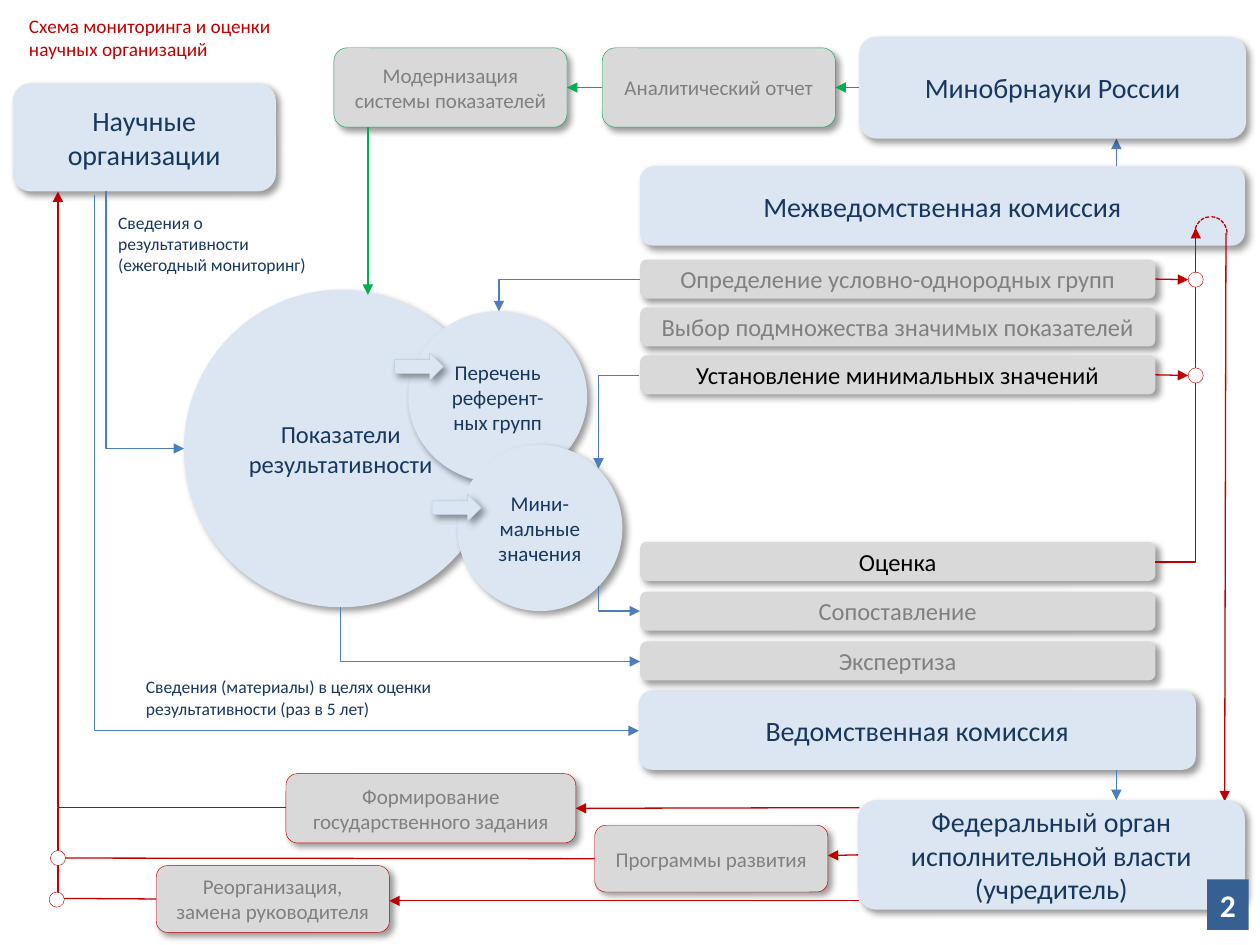
from pptx import Presentation
from pptx import util as u
from pptx.dml.color import RGBColor
from pptx.enum import dml, shapes, text
from pptx.oxml import parse_xml
from pptx.oxml.ns import nsdecls, qn

NAVY = RGBColor(0x17, 0x37, 0x5E)
PALE = RGBColor(0xDC, 0xE6, 0xF2)
PALE_EDGE = RGBColor(0xB9, 0xCD, 0xE5)
BLUE = RGBColor(0x4B, 0x7E, 0xBC)
BADGE = RGBColor(0x37, 0x60, 0x92)
LIGHT = RGBColor(0xD9, 0xD9, 0xD9)
GRAY = RGBColor(0x80, 0x80, 0x80)
BLACK = RGBColor(0, 0, 0)
WHITE = RGBColor(0xFF, 0xFF, 0xFF)
RED = RGBColor(0xC0, 0, 0)
GREEN = RGBColor(0, 0xB0, 0x50)
SHAPE = shapes.MSO_SHAPE
TOP, LEFT, BOTTOM, RIGHT = range(4)
SHADOW = (
    '<a:outerShdw %s blurRad="50800" dist="38100" dir="2700000" algn="tl" '
    'rotWithShape="0"><a:srgbClr val="000000"><a:alpha val="40000"/></a:srgbClr>'
    "</a:outerShdw>" % nsdecls("a")
)


def write(sp, words, size, color, align=text.PP_ALIGN.CENTER, bold=False):
    """Put words into a shape and format every run."""
    tf = sp.text_frame
    tf.text = words
    for p in tf.paragraphs:
        p.alignment = align
        for r in p.runs:
            r.font.name, r.font.size, r.font.bold = "Calibri", u.Pt(size), bold
            r.font.color.rgb = color


class Region:
    """A box on the slide whose parts are placed from its top left corner."""

    def __init__(self, s, box):
        self.shapes = s.shapes
        self.left, self.top = box[:2]

    def point(self, x, y):
        """Return slide lengths for a point of the region."""
        return u.Inches(self.left + x), u.Inches(self.top + y)

    def shape(self, kind, x, y, w, h, fill, edge=None, shadow=True, parent=None):
        """Add a preset shape."""
        sp = (parent or self.shapes).add_shape(
            kind, *self.point(x, y), u.Inches(w), u.Inches(h))
        sp.shadow.inherit = False
        if shadow:
            sp._element.spPr.find(qn("a:effectLst")).append(parse_xml(SHADOW))
        if fill is None:
            sp.fill.background()
        else:
            sp.fill.solid()
            sp.fill.fore_color.rgb = fill
        if edge is None:
            sp.line.fill.background()
        else:
            sp.line.color.rgb = edge
            sp.line.width = u.Pt(0.25)
        return sp

    def body(self, x, y, w, h, words, kind=SHAPE.ROUNDED_RECTANGLE, size=16):
        """Add a pale blue body with its name."""
        sp = self.shape(kind, x, y, w, h, PALE)
        write(sp, words, size, NAVY)
        return sp

    def step(self, x, y, w, h, words, size=12, color=GRAY, edge=None):
        """Add a grey process step."""
        sp = self.shape(SHAPE.ROUNDED_RECTANGLE, x, y, w, h, LIGHT, edge)
        write(sp, words, size, color)
        return sp

    def node(self, x, y):
        """Add a small red junction ring."""
        self.shape(SHAPE.OVAL, x, y, 0.12, 0.12, WHITE, RED, shadow=False)

    def label(self, x, y, w, h, words):
        """Add a small note."""
        sp = self.shapes.add_textbox(*self.point(x, y), u.Inches(w), u.Inches(h))
        sp.text_frame.word_wrap = True
        write(sp, words, 10, NAVY, text.PP_ALIGN.LEFT)

    def line(self, start, end, color, arrow=True, kind=shapes.MSO_CONNECTOR.STRAIGHT):
        """Add a connector, with an arrowhead at its end if wanted."""
        cx = self.shapes.add_connector(kind, *self.point(*start), *self.point(*end))
        cx.line.color.rgb = color
        cx.line.width = u.Pt(0.75)
        if arrow:
            ln = cx.line._get_or_add_ln()
            ln.append(parse_xml('<a:tailEnd %s type="triangle"/>' % nsdecls("a")))
        cx._element.spPr.append(parse_xml("<a:effectLst %s/>" % nsdecls("a")))
        return cx

    def elbow(self, start, end, color, down_first=False):
        """Add a connector with one corner, going sideways or down first."""
        if down_first:
            (x1, y1), (x2, y2) = start, end
            mx, my = (x1 + x2) / 2, (y1 + y2) / 2
            dx, dy = (x2 - x1) / 2, (y2 - y1) / 2
            start, end = (mx + dy, my - dx), (mx - dy, my + dx)
        cx = self.line(start, end, color, kind=shapes.MSO_CONNECTOR.ELBOW)
        spPr = cx._element.spPr
        spPr.find(qn("a:prstGeom")).set("prst", "bentConnector2")
        if down_first:
            spPr.find(qn("a:xfrm")).set("rot", "16200000")


def add_title(s, box):
    """Place the scheme title."""
    sp = s.shapes.title
    sp.left, sp.top, sp.width, sp.height = map(u.Inches, box)
    write(sp, "Схема мониторинга и оценки научных организаций", 11, RED,
          text.PP_ALIGN.LEFT)
    sp.text_frame.vertical_anchor = text.MSO_ANCHOR.TOP
    sp.text_frame.auto_size = text.MSO_AUTO_SIZE.NONE


def add_organizations(s, box):
    """Draw the research organizations and the data they send."""
    g = Region(s, box)
    g.body(0, 0, 2.09, 0.86, "Научные организации")
    g.label(0.74, 0.97, 1.77, 0.61,
            "Сведения о результативности\n(ежегодный мониторинг)")
    g.label(0.96, 4.66, 3.41, 0.44,
            "Сведения (материалы) в целях оценки результативности (раз в 5 лет)")
    g.elbow((0.74, 0.86), (1.36, 2.9), BLUE, down_first=True)
    g.elbow((0.65, 0.89), (4.97, 5.14), BLUE, down_first=True)


def add_commissions(s, box):
    """Draw both commissions, their tasks and the decision route."""
    g = Region(s, box)
    g.body(0.01, 0, 4.8, 0.63, "Межведомственная комиссия")
    g.body(0, 4.16, 4.42, 0.63, "Ведомственная комиссия")
    groups = [
        (0.74, 0.38, [("Определение условно-однородных групп", GRAY),
                      ("Выбор подмножества значимых показателей", GRAY),
                      ("Установление минимальных значений", BLACK)]),
        (2.98, 0.395, [("Оценка", BLACK), ("Сопоставление", GRAY),
                       ("Экспертиза", GRAY)]),
    ]
    tasks = [g.step(0.01, y + i * pitch, 4.09, 0.31, words, 14, color)
             for y, pitch, rows in groups for i, (words, color) in enumerate(rows)]
    g.line((3.79, 0), (3.79, -0.22), BLUE)
    g.line((3.79, 4.79), (3.79, 5.03), BLUE)
    g.line((4.66, 0.53), (4.65, 5.04), RED)
    g.elbow((4.1, 3.14), (4.42, 0.49), RED)
    for task, y in ((tasks[0], 0.9), (tasks[2], 1.66)):
        g.node(4.36, y - 0.06)
        g.line((4.1, y), (4.36, y), RED).begin_connect(task, RIGHT)
    bridge = s.shapes.add_group_shape().shapes
    for (x, y, w, h), turn in (((4.42, 0.4, 0.25, 0.28), 0),
                               ((4.4, 0.41, 0.27, 0.25), 270)):
        arc = g.shape(SHAPE.ARC, x, y, w, h, None, RED, False, bridge)
        arc.rotation = turn
        arc.line.width = u.Pt(0.75)
        arc.line.dash_style = dml.MSO_LINE.SQUARE_DOT


def add_indicators(s, box):
    """Draw the indicator circles and their links to the tasks."""
    g = Region(s, box)
    for x, y, w, h, words, size in (
            (0, 0, 2.49, 2.52, "Показатели результативности", 14),
            (1.78, 0.17, 1.42, 1.36, "Перечень референт-ных групп", 12),
            (2.17, 1.23, 1.31, 1.32, "Мини-мальные значения", 12)):
        g.body(x, y, w, h, words, SHAPE.OVAL, size)
    g.elbow((3.61, 0.68), (3.29, 1.42), BLUE)
    g.elbow((3.62, -0.08), (2.5, 0.17), BLUE)
    g.elbow((3.29, 2.35), (3.62, 2.55), BLUE, down_first=True)
    g.elbow((1.24, 2.52), (3.62, 2.95), BLUE, down_first=True)
    for x, y in ((1.67, 0.5), (1.97, 1.62)):
        g.shape(SHAPE.RIGHT_ARROW, x, y, 0.39, 0.22, PALE, PALE_EDGE)


def add_ministry(s, box):
    """Draw the ministry and the reporting chain."""
    g = Region(s, box)
    ministry = g.body(4.17, 0, 3.07, 0.81, "Минобрнауки России")
    report, update = [
        g.step(x, 0.09, 1.85, 0.63, words, edge=GREEN)
        for x, words in ((2.13, "Аналитический отчет"),
                         (0, "Модернизация системы показателей"))]
    for giver, taker in ((ministry, report), (report, update)):
        cx = g.line((0, 0), (1, 0), GREEN)
        cx.begin_connect(giver, LEFT)
        cx.end_connect(taker, RIGHT)
    g.line((0.27, 0.72), (0.27, 2.05), GREEN)


def add_founder(s, box):
    """Draw the founder body, its decisions and the page number."""
    g = Region(s, box)
    founder = g.body(6.42, 0.21, 3.07, 0.87,
                     "Федеральный орган исполнительной власти (учредитель)")
    program = g.step(4.33, 0.41, 1.85, 0.53, "Программы развития", edge=RED)
    order = g.step(1.88, 0, 2.3, 0.55, "Формирование государственного задания",
                   edge=RED)
    reform = g.step(0.85, 0.73, 1.85, 0.53, "Реорганизация, замена руководителя",
                    edge=RED)
    g.line((6.43, 0.27), (4.18, 0.27), RED).end_connect(order, RIGHT)
    g.line((6.43, 0.65), (6.18, 0.65), RED).begin_connect(founder, LEFT)
    g.line((6.43, 1.01), (2.7, 1.01), RED)
    g.elbow((1.88, 0.27), (0.07, -4.62), RED)
    g.line((0.07, 0.99), (0.07, 0.27), RED, arrow=False)
    g.line((0.85, 0.99), (0.07, 0.99), RED, False).begin_connect(reform, LEFT)
    g.line((4.33, 0.67), (0.08, 0.67), RED, False).begin_connect(program, LEFT)
    g.node(0, 0.94)
    g.node(0.01, 0.61)
    badge = g.shape(SHAPE.RECTANGLE, 9.19, 0.84, 0.33, 0.4, BADGE, shadow=False)
    write(badge, "2", 18, WHITE, bold=True)
    badge.text_frame.word_wrap = False


def main():
    """Build the monitoring scheme."""
    prs = Presentation()
    prs.slide_width, prs.slide_height = u.Inches(10), u.Inches(7.5)
    s = prs.slides.add_slide(prs.slide_layouts[5])
    add_title(s, (0.13, 0.06, 2.2, 0.47))
    add_organizations(s, (0.1, 0.66, 4.97, 5.14))
    add_commissions(s, (5.07, 1.32, 4.81, 4.79))
    add_indicators(s, (1.46, 2.3, 3.62, 2.95))
    add_ministry(s, (2.65, 0.29, 7.24, 0.81))
    add_founder(s, (0.39, 6.14, 9.52, 1.26))
    prs.save("out.pptx")


if __name__ == "__main__":
    main()
